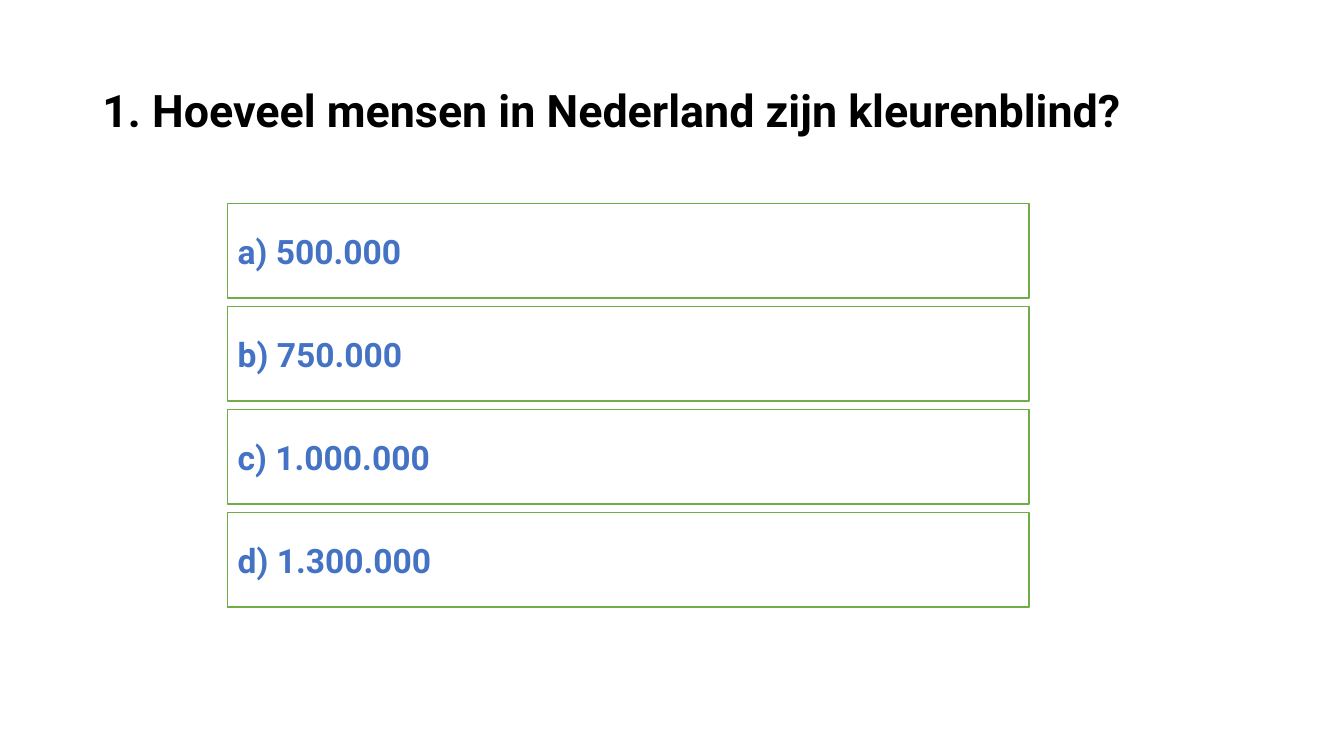
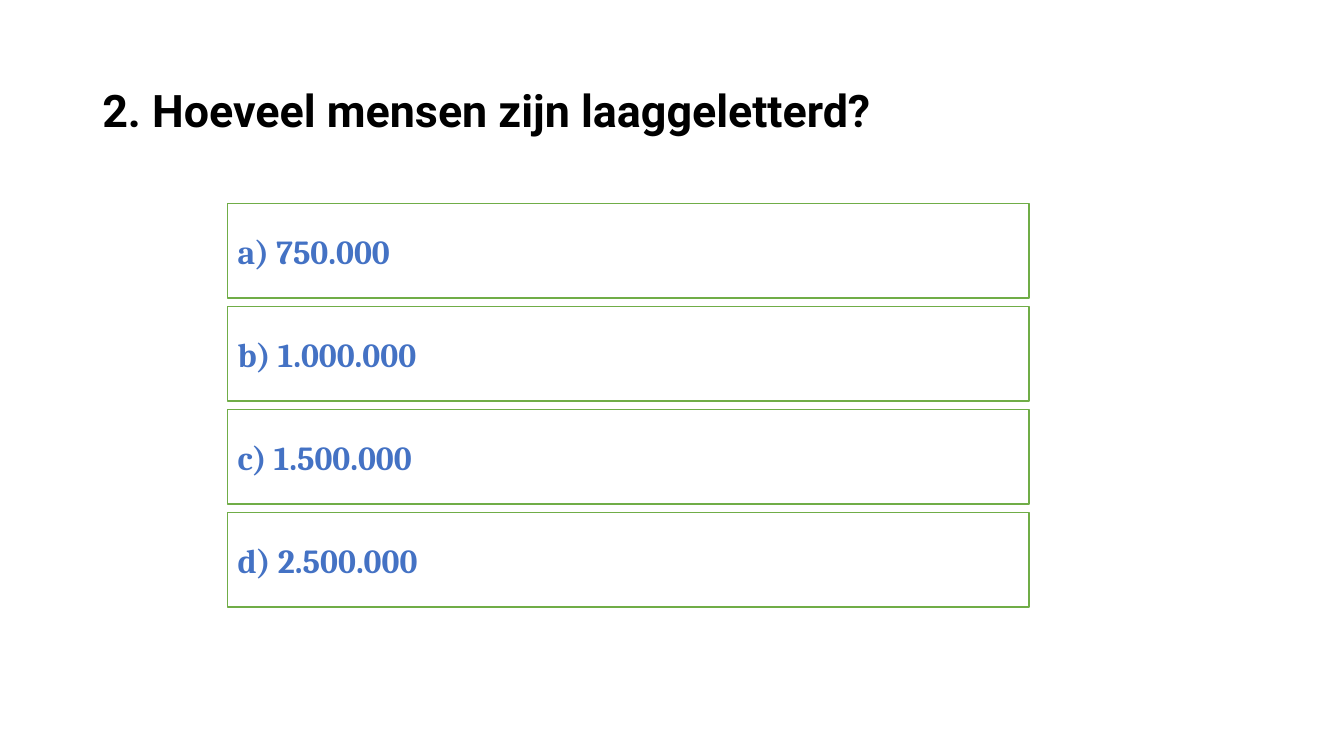
import pptx
import pptx.util
import pptx.dml.color
import pptx.enum.shapes
import pptx.enum.text

PX = 9525
COLORS = {"title": "000000", "answer": "4472C4", "box": "FFFFFF", "border": "70AD47"}
QUESTIONS = [
    ("1. Hoeveel mensen in Nederland zijn kleurenblind?", "Roboto",
     ["a) 500.000", "b) 750.000", "c) 1.000.000", "d) 1.300.000"]),
    ("2. Hoeveel mensen zijn laaggeletterd?", "Cambria",
     ["a) 750.000", "b) 1.000.000", "c) 1.500.000", "d) 2.500.000"]),
]


def px(*lengths):
    return [pptx.util.Emu(n * PX) for n in lengths]


def rgb(name):
    return pptx.dml.color.RGBColor.from_string(COLORS[name])


class Quiz:
    title_font = "Roboto"
    title_size = 32
    answer_size = 24
    answer_top = 194
    answer_pitch = 98

    def __init__(self):
        self.prs = pptx.Presentation()
        self.prs.slide_width, self.prs.slide_height = px(1280, 720)
        self.s = None

    def slide(self):
        self.s = self.prs.slides.add_slide(self.prs.slide_layouts[6])

    def text(self, sp, text, font, size, color):
        tf = sp.text_frame
        tf.word_wrap = True
        tf.vertical_anchor = pptx.enum.text.MSO_ANCHOR.MIDDLE
        tf.text = text
        p = tf.paragraphs[0]
        p.alignment = pptx.enum.text.PP_ALIGN.LEFT
        r = p.runs[0]
        r.font.name = font
        r.font.size = pptx.util.Pt(size)
        r.font.bold = True
        r.font.color.rgb = rgb(color)
        return p

    def title(self, text):
        sp = self.s.shapes.add_textbox(*px(88, 38, 1104, 139))
        p = self.text(sp, text, self.title_font, self.title_size, "title")
        p.line_spacing = 0.9

    def answer(self, row, text, font):
        top = self.answer_top + row * self.answer_pitch
        sp = self.s.shapes.add_shape(
            pptx.enum.shapes.MSO_SHAPE.RECTANGLE, *px(217, top, 763, 90))
        sp.shadow.inherit = False
        sp.fill.solid()
        sp.fill.fore_color.rgb = rgb("box")
        sp.line.color.rgb = rgb("border")
        sp.line.width = pptx.util.Pt(1)
        self.text(sp, text, font, self.answer_size, "answer")


def main():
    quiz = Quiz()
    for question, font, answers in QUESTIONS:
        quiz.slide()
        quiz.title(question)
        for row, answer in enumerate(answers):
            quiz.answer(row, answer, font)
    quiz.prs.save("out.pptx")


if __name__ == "__main__":
    main()
